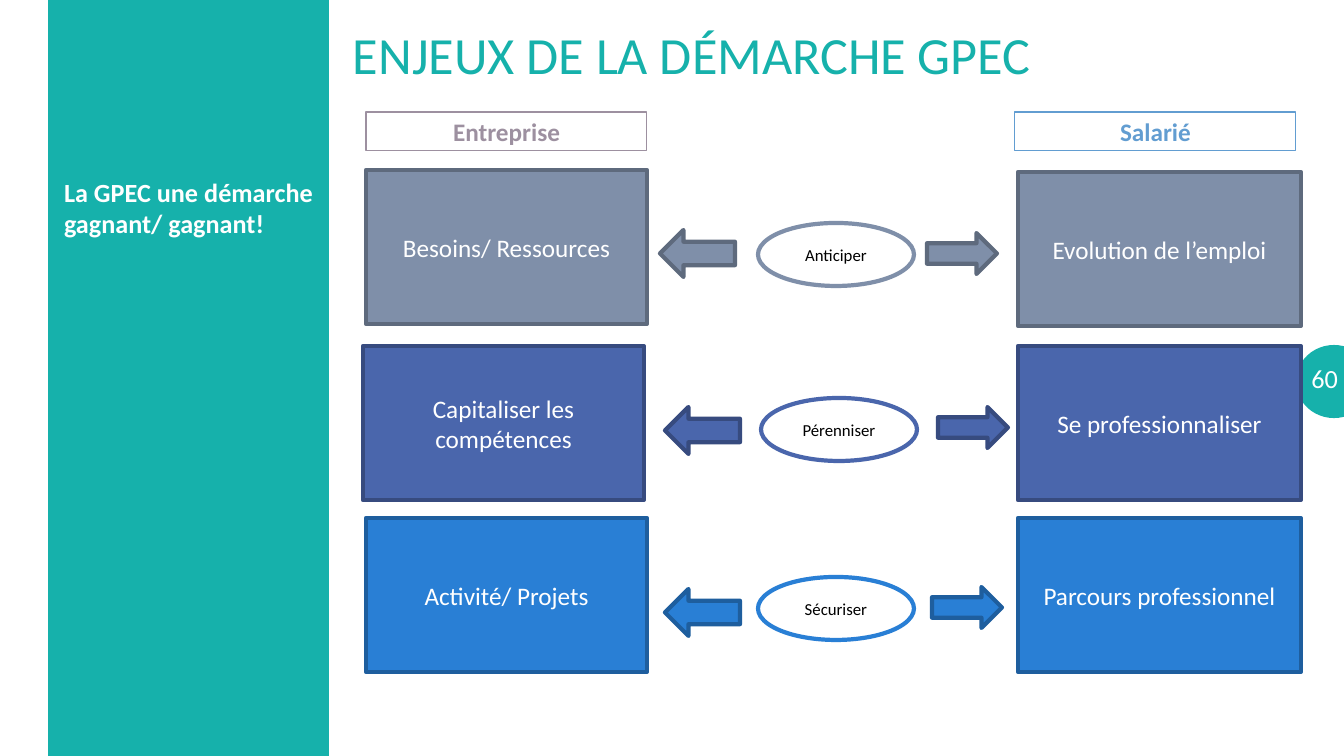
from dataclasses import dataclass

from pptx import Presentation
from pptx.dml.color import RGBColor
from pptx.enum.shapes import MSO_SHAPE
from pptx.enum.text import MSO_ANCHOR, PP_ALIGN
from pptx.util import Pt

RECTANGLE, OVAL = MSO_SHAPE.RECTANGLE, MSO_SHAPE.OVAL
LEFT_ARROW, RIGHT_ARROW = MSO_SHAPE.LEFT_ARROW, MSO_SHAPE.RIGHT_ARROW
TOP, MIDDLE = MSO_ANCHOR.TOP, MSO_ANCHOR.MIDDLE
LEFT, CENTER, RIGHT, JUSTIFY = PP_ALIGN.LEFT, PP_ALIGN.CENTER, PP_ALIGN.RIGHT, PP_ALIGN.JUSTIFY


@dataclass(frozen=True)
class Theme:
    font: str = "Calibri"
    teal: str = "16B1AB"
    white: str = "FFFFFF"
    black: str = "000000"
    title_size: float = 37.3
    panel_size: float = 18.7
    box_size: float = 18
    oval_size: float = 12
    thick: float = 3
    medium: float = 1.5
    thin: float = 0.75


THEME = Theme()

TITLE = "ENJEUX DE LA DÉMARCHE GPEC"
MESSAGE = "La GPEC une démarche gagnant/ gagnant!"
PAGE_NUMBER = "60"

# text, left, colour
HEADINGS = [("Entreprise", 366, "9D90A0"), ("Salarié", 1015, "629DD1")]

# Each position is (left, top) in px
ROWS = [
    {"fill": "7F8FA9", "line": "5E6A7D",
     "company": ("Besoins/ Ressources", (366, 170)),
     "goal": ("Anticiper", (758, 223)),
     "employee": ("Evolution de l’emploi", (1018, 172)),
     "arrows": ((660, 230), (927, 233))},
    {"fill": "4A66AC", "line": "374B7F",
     "company": ("Capitaliser les compétences", (363, 346)),
     "goal": ("Pérenniser", (761, 398)),
     "employee": ("Se professionnaliser", (1018, 346)),
     "arrows": ((665, 407), (938, 407))},
    {"fill": "297FD5", "line": "1E5E9E",
     "company": ("Activité/ Projets", (366, 518)),
     "goal": ("Sécuriser", (758, 577)),
     "employee": ("Parcours professionnel", (1018, 518)),
     "arrows": ((665, 589), (932, 587))},
]

COMPANY_SIZE, EMPLOYEE_SIZE = (281, 154), (283, 154)
GOAL_SIZE, HEADING_SIZE = (156, 63), (281, 39)
LEFT_ARROW_SIZE, RIGHT_ARROW_SIZE = (75, 47), (70, 41)
PAGE_SIZE = (1344, 756)


def px(length):
    return round(length * 914400 / 100.8)


def place(position, size):
    return [px(length) for length in (*position, *size)]


def write(shape, text, size, color, bold=False, align=CENTER, anchor=MIDDLE, inset=(10, 5)):
    frame = shape.text_frame
    frame.word_wrap = True
    frame.vertical_anchor = anchor
    frame.margin_left = frame.margin_right = px(inset[0])
    frame.margin_top = frame.margin_bottom = px(inset[1])
    para = frame.paragraphs[0]
    para.alignment = align
    span = para.add_run()
    span.text = text
    span.font.name = THEME.font
    span.font.size = Pt(size)
    span.font.bold = bold
    span.font.color.rgb = RGBColor.from_string(color)


def draw(page, kind, position, size, fill=None, line=None, width=THEME.thick):
    shape = page.shapes.add_shape(kind, *place(position, size))
    shape.shadow.inherit = False
    if fill:
        shape.fill.solid()
        shape.fill.fore_color.rgb = RGBColor.from_string(fill)
    else:
        shape.fill.background()
    if line:
        shape.line.color.rgb = RGBColor.from_string(line)
        shape.line.width = Pt(width)
    else:
        shape.line.fill.background()
    return shape


def add_frame(page):
    """Draw the side panel, the page number and the title."""
    draw(page, RECTANGLE, (48, 0), (281, 756), THEME.teal)
    draw(page, OVAL, (1297, 346), (74, 71), THEME.teal, THEME.teal, THEME.medium)
    number = page.shapes.add_textbox(*place((1293, 358), (58, 40)))
    write(number, PAGE_NUMBER, THEME.panel_size, THEME.white, align=RIGHT, inset=(13, 7))
    message = page.shapes.add_textbox(*place((48, 160), (281, 540)))
    write(message, MESSAGE, THEME.panel_size, THEME.white, bold=True,
          align=JUSTIFY, anchor=TOP, inset=(16, 16))
    title = page.shapes.title
    title.left, title.top, title.width, title.height = place((343, 15), (954, 78))
    write(title, TITLE, THEME.title_size, THEME.teal, align=LEFT)


def add_row(page, row):
    fill, line = row["fill"], row["line"]
    text, position = row["goal"]
    goal = draw(page, OVAL, position, GOAL_SIZE, THEME.white, fill)
    write(goal, text, THEME.oval_size, THEME.black)
    for side, size in (("company", COMPANY_SIZE), ("employee", EMPLOYEE_SIZE)):
        text, position = row[side]
        box = draw(page, RECTANGLE, position, size, fill, line)
        write(box, text, THEME.box_size, THEME.white)
    to_company, to_employee = row["arrows"]
    draw(page, LEFT_ARROW, to_company, LEFT_ARROW_SIZE, fill, line)
    draw(page, RIGHT_ARROW, to_employee, RIGHT_ARROW_SIZE, fill, line)


def main():
    deck = Presentation()
    deck.slide_width, deck.slide_height = map(px, PAGE_SIZE)
    page = deck.slides.add_slide(deck.slide_layouts[5])
    add_frame(page)
    for row in ROWS:
        add_row(page, row)
    for text, left, color in HEADINGS:
        heading = draw(page, RECTANGLE, (left, 112), HEADING_SIZE, line=color, width=THEME.thin)
        write(heading, text, THEME.box_size, color, bold=True)
    deck.save("out.pptx")


if __name__ == "__main__":
    main()
